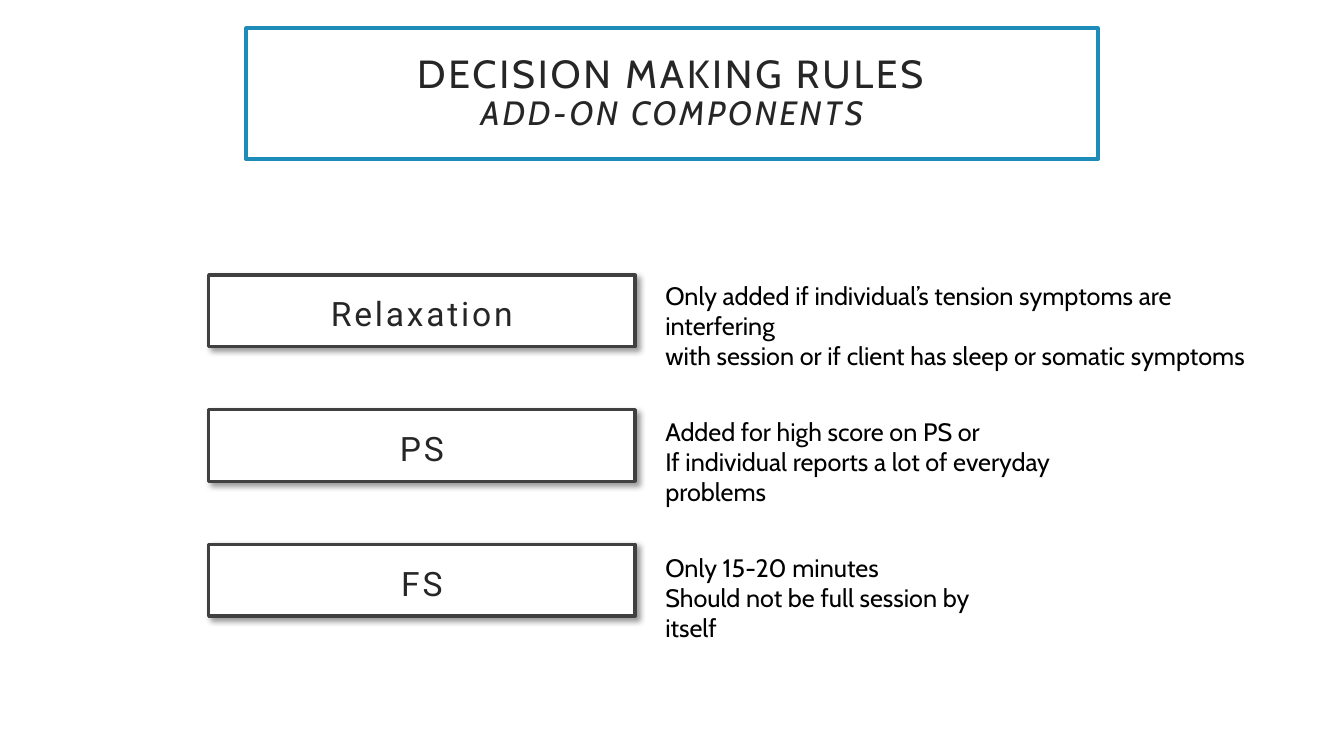
from dataclasses import dataclass

from lxml.etree import SubElement
from pptx import Presentation
from pptx.dml.color import RGBColor
from pptx.enum.shapes import MSO_SHAPE
from pptx.enum.text import MSO_ANCHOR, MSO_AUTO_SIZE, PP_ALIGN
from pptx.oxml.ns import qn
from pptx.util import Inches, Pt


@dataclass(frozen=True)
class Theme:
    paper: str = "FFFFFF"
    ink: str = "262626"
    black: str = "000000"
    accent: str = "1E8CB9"
    border: str = "404040"
    text_font: str = "Cabin"
    label_font: str = "Roboto"
    title_size: int = 28
    label_size: int = 24
    note_size: int = 18
    border_width: float = 2.5


THEME = Theme()

# Label, width of its note, lines of the note
RULES = [
    ("Relaxation", 6.24,
     ["Only added if individual’s tension symptoms are interfering",
      "with session or if client has sleep or somatic symptoms"]),
    ("PS", 4.96,
     ["Added for high score on PS or",
      "If individual reports a lot of everyday problems"]),
    ("FS", 3.72,
     ["Only 15-20 minutes",
      "Should not be full session by itself"]),
]
FIRST_TOP = 2.73
LABEL_PITCH = 1.335
NOTE_PITCH = 1.35
ROW_HEIGHT = 0.71


def add_span(para, text, *, font, size, color, spacing=0, italic=False):
    """Add a run; spacing is the letter spacing in points."""
    span = para.add_run()
    span.text = text
    span.font.name = font
    span.font.size = Pt(size)
    span.font.italic = italic
    span.font.color.rgb = RGBColor.from_string(color)
    if spacing:
        span.font._element.set("spc", str(spacing * 100))


def frame_box(box, *, border, top_inset):
    """Give a box its fill, border and insets; return its centred paragraph."""
    box.fill.solid()
    box.fill.fore_color.rgb = RGBColor.from_string(THEME.paper)
    box.line.color.rgb = RGBColor.from_string(border)
    box.line.width = Pt(THEME.border_width)
    frame = box.text_frame
    frame.word_wrap = True
    frame.auto_size = MSO_AUTO_SIZE.NONE
    frame.vertical_anchor = MSO_ANCHOR.MIDDLE
    frame.margin_left = frame.margin_right = frame.margin_bottom = Inches(0.2)
    frame.margin_top = Inches(top_inset)
    para = frame.paragraphs[0]
    para.alignment = PP_ALIGN.CENTER
    para.line_spacing = 0.9
    return para


def add_soft_shadow(box):
    box.shadow.inherit = False
    effects = box._element.spPr.find(qn("a:effectLst"))
    shadow = SubElement(effects, qn("a:outerShdw"), blurRad=str(Pt(4)),
                        dist=str(Pt(3)), dir="2700000", algn="tl", rotWithShape="0")
    color = SubElement(shadow, qn("a:srgbClr"), val=THEME.black)
    SubElement(color, qn("a:alpha"), val="40000")


def set_title(page, heading, subheading):
    box = page.shapes.title
    box.left, box.top = Inches(2.44), Inches(0.28)
    box.width, box.height = Inches(8.45), Inches(1.3)
    para = frame_box(box, border=THEME.accent, top_inset=0.2)
    look = {"font": THEME.text_font, "color": THEME.ink, "spacing": 2}
    add_span(para, heading, size=THEME.title_size, **look)
    para.add_line_break()
    add_span(para, subheading, size=THEME.label_size, italic=True, **look)


def add_label(page, text, top):
    box = page.shapes.add_shape(MSO_SHAPE.RECTANGLE, Inches(2.07), Inches(top),
                                Inches(4.23), Inches(ROW_HEIGHT))
    add_soft_shadow(box)
    para = frame_box(box, border=THEME.border, top_inset=0.3)
    add_span(para, text, font=THEME.label_font, size=THEME.label_size,
             color=THEME.ink, spacing=2)


def add_note(page, lines, top, width):
    box = page.shapes.add_textbox(Inches(6.5), Inches(top),
                                  Inches(width), Inches(ROW_HEIGHT))
    frame = box.text_frame
    frame.word_wrap = True
    frame.auto_size = MSO_AUTO_SIZE.SHAPE_TO_FIT_TEXT
    for index, line in enumerate(lines):
        para = frame.add_paragraph() if index else frame.paragraphs[0]
        add_span(para, line, font=THEME.text_font, size=THEME.note_size,
                 color=THEME.black)


def main():
    deck = Presentation()
    deck.slide_width, deck.slide_height = Inches(13.33), Inches(7.5)
    page = deck.slides.add_slide(deck.slide_layouts.get_by_name("Title Only"))
    set_title(page, "DECISION MAKING RULES", "ADD-ON COMPONENTS")
    for row, (label, width, lines) in enumerate(RULES):
        add_label(page, label, FIRST_TOP + row * LABEL_PITCH)
        add_note(page, lines, FIRST_TOP + row * NOTE_PITCH, width)
    deck.save("out.pptx")


if __name__ == "__main__":
    main()
